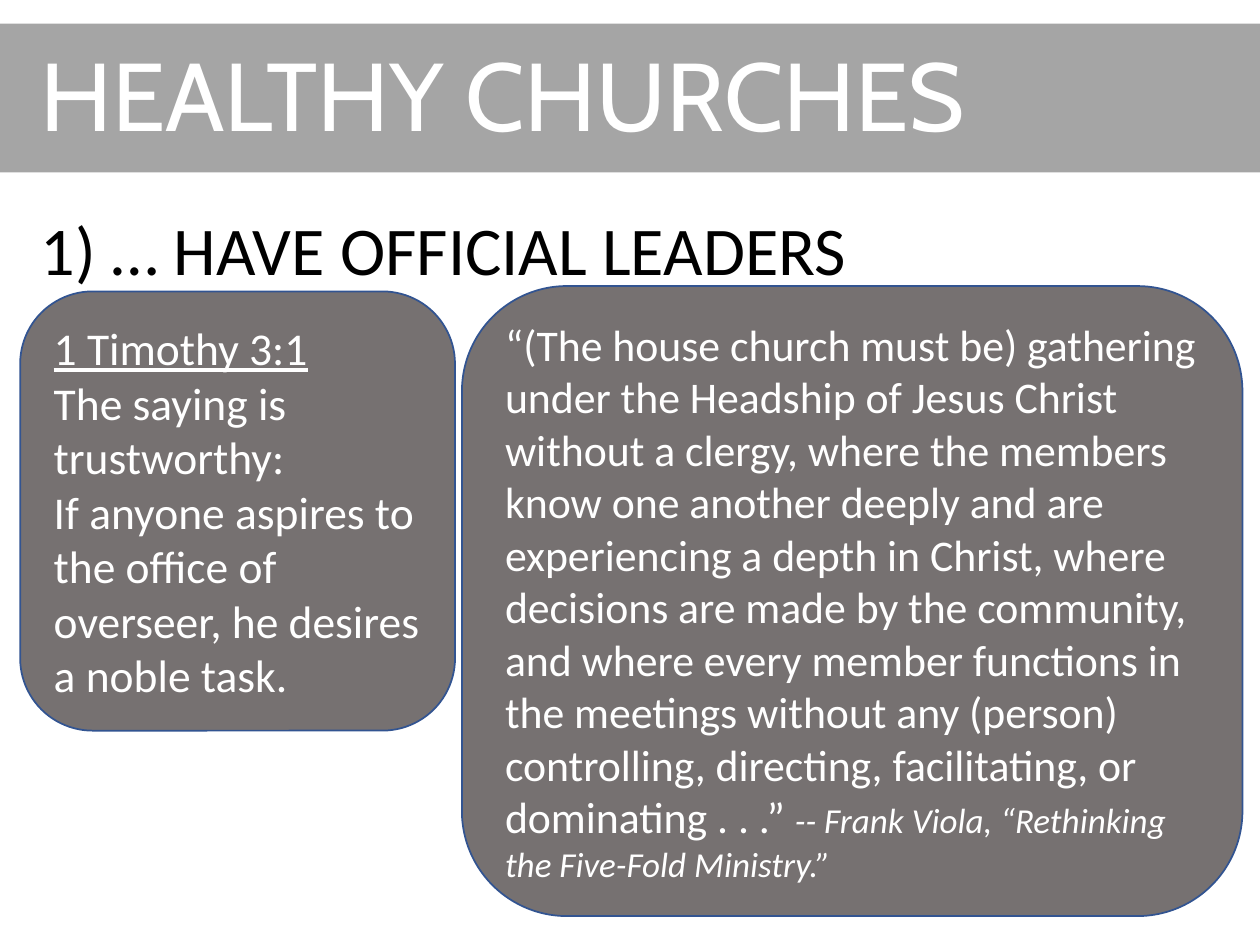
from dataclasses import dataclass
from lxml.etree import SubElement
from pptx import Presentation
from pptx.dml.color import RGBColor
from pptx.enum.shapes import MSO_SHAPE
from pptx.enum.text import MSO_ANCHOR, MSO_AUTO_SIZE, PP_ALIGN
from pptx.oxml.ns import qn
from pptx.util import Pt


@dataclass(frozen=True)
class Theme:
    white: str = "FFFFFF"
    black: str = "000000"
    band: str = "808080"
    card: str = "767171"
    outline: str = "325491"
    heading_font: str = "Cabin"
    body_font: str = "Calibri"
    title_size: int = 55
    point_size: int = 39
    verse_size: int = 26
    quote_size: int = 25
    credit_size: int = 20


class Deck:
    def __init__(self, prs, theme):
        self.theme = theme
        self.s = prs.slides.add_slide(prs.slide_layouts[1])

    def font(self, r, size, color, name=None):
        r.font.name = name or self.theme.body_font
        r.font.size = Pt(size)
        r.font.color.rgb = RGBColor.from_string(color)

    def place(self, sp, box):
        sp.left, sp.top, sp.width, sp.height = map(Pt, box)

    def shape(self, kind, box, color):
        sp = self.s.shapes.add_shape(kind, *map(Pt, box))
        sp.shadow.inherit = False
        sp.fill.solid()
        sp.fill.fore_color.rgb = RGBColor.from_string(color)
        return sp

    def band(self, box, opacity):
        sp = self.shape(MSO_SHAPE.RECTANGLE, box, self.theme.band)
        sp.line.fill.background()
        color = sp.fill._xPr.find(".//" + qn("a:srgbClr"))
        SubElement(color, qn("a:alpha"), val=str(opacity * 1000))
        self.s.shapes._spTree.insert(2, sp._element)

    def placeholder(self, sp, box, text, anchor):
        self.place(sp, box)
        tf = sp.text_frame
        tf.text = text
        tf.word_wrap = True
        tf.auto_size = MSO_AUTO_SIZE.NONE
        tf.vertical_anchor = anchor
        p = tf.paragraphs[0]
        p.alignment = PP_ALIGN.LEFT
        p.line_spacing = 0.9
        p.space_before = Pt(0)
        return p

    def title(self, box, text):
        p = self.placeholder(self.s.shapes.title, box, text, MSO_ANCHOR.MIDDLE)
        self.font(p.runs[0], self.theme.title_size, self.theme.white, self.theme.heading_font)

    def point(self, box, text):
        p = self.placeholder(self.s.placeholders[1], box, text, MSO_ANCHOR.TOP)
        pPr = p._p.get_or_add_pPr()
        pPr.set("marL", "0")
        pPr.set("indent", "0")
        SubElement(pPr, qn("a:buNone"))
        self.font(p.runs[0], self.theme.point_size, self.theme.black)

    def card(self, box, text, size):
        sp = self.shape(MSO_SHAPE.ROUNDED_RECTANGLE, box, self.theme.card)
        sp.line.color.rgb = RGBColor.from_string(self.theme.outline)
        sp.line.width = Pt(1)
        tf = sp.text_frame
        tf.word_wrap = True
        tf.vertical_anchor = MSO_ANCHOR.MIDDLE
        p = tf.paragraphs[0]
        p.text = text
        p.alignment = PP_ALIGN.LEFT
        for r in p.runs:
            self.font(r, size, self.theme.white)
        return p

    def verse(self, box, lines):
        p = self.card(box, "\v".join(lines), self.theme.verse_size)
        p.runs[0].font.underline = True

    def quote(self, box, text, credit):
        p = self.card(box, text, self.theme.quote_size)
        r = p.add_run()
        r.text = credit
        self.font(r, self.theme.credit_size, self.theme.white)
        r.font.italic = True


def main():
    prs = Presentation()
    prs.slide_width, prs.slide_height = Pt(720), Pt(540)
    deck = Deck(prs, Theme())
    deck.band((0, 13.5, 720, 85), 70)
    deck.title((16, 5, 695.5, 104.5), "HEALTHY CHURCHES")
    deck.point((16, 120, 694, 409), "1) … HAVE OFFICIAL LEADERS")
    deck.quote(
        (264, 163.5, 446, 360),
        "“(The house church must be) gathering under the Headship of Jesus Christ "
        "without a clergy, where the members know one another deeply and are "
        "experiencing a depth in Christ, where decisions are made by the community, "
        "and where every member functions in the meetings without any (person) "
        "controlling, directing, facilitating, or dominating . . .” ",
        "-- Frank Viola, “Rethinking the Five-Fold Ministry.”",
    )
    deck.verse(
        (11.5, 166.5, 248.5, 251),
        [
            "1 Timothy 3:1",
            "The saying is trustworthy:",
            "If anyone aspires to the office of overseer, he desires a noble task.",
        ],
    )
    prs.save("out.pptx")


if __name__ == "__main__":
    main()
